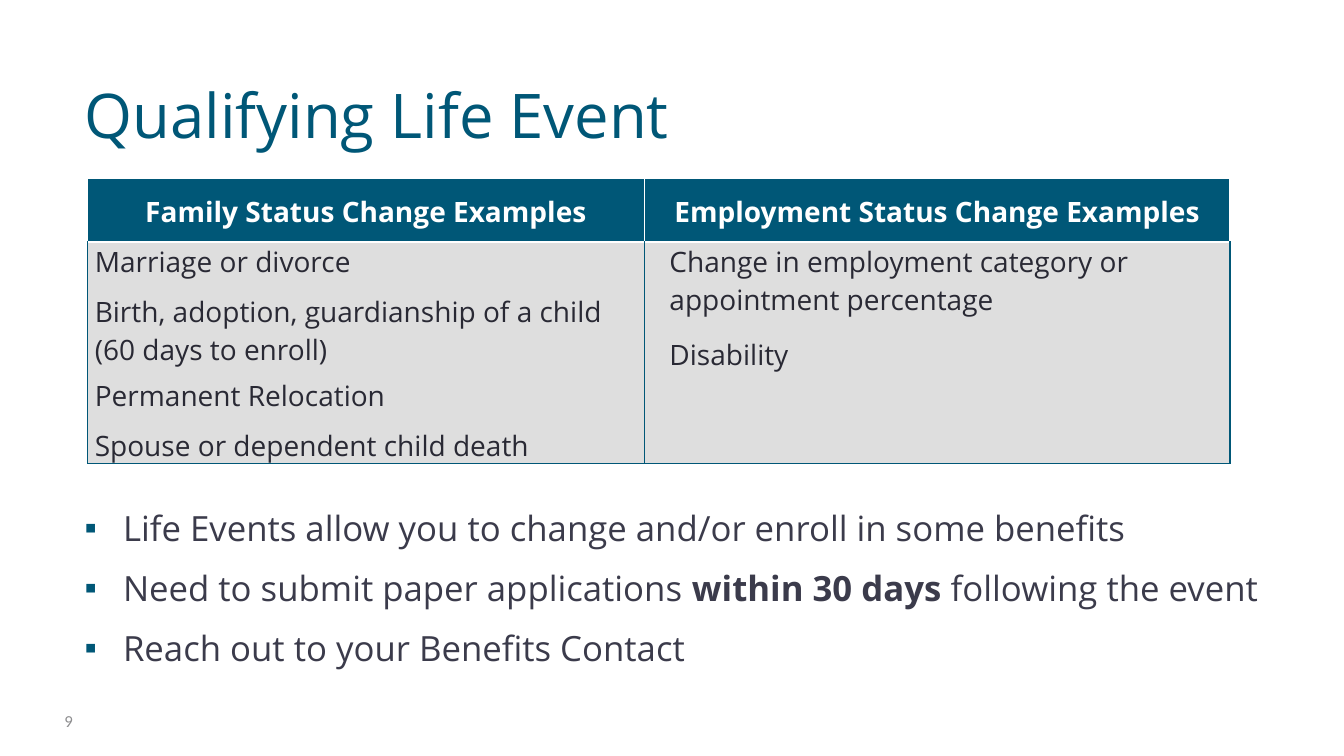
from dataclasses import dataclass

from lxml.etree import SubElement
from pptx import Presentation
from pptx.dml.color import RGBColor as RGB
from pptx.enum.text import MSO_ANCHOR as Anchor, MSO_AUTO_SIZE as AutoSize, PP_ALIGN as Align
from pptx.oxml.ns import qn
from pptx.util import Inches, Pt


@dataclass(frozen=True)
class Theme:
    font: str = "Open Sans"
    number_font: str = "Calibri"
    teal: str = "005777"
    white: str = "FFFFFF"
    cell: str = "DEDEDE"
    cell_text: str = "292934"
    body_text: str = "3B3B4B"
    number_text: str = "8E8E90"
    title_size: float = 44
    body_size: float = 24.8
    table_size: float = 20
    number_size: float = 12


@dataclass(frozen=True)
class Column:
    header: str
    width: float
    events: tuple[str, ...]
    after: tuple[float, ...]
    before: float = 0
    indent: float = 0


T = Theme()
COLUMNS = (
    Column(
        "Family Status Change Examples", 5.52,
        ("Marriage or divorce",
         "Birth, adoption, guardianship of a child (60 days to enroll)",
         "Permanent Relocation",
         "Spouse or dependent child death"),
        (8, 6, 8, 8),
    ),
    Column(
        "Employment Status Change Examples", 5.81,
        ("Change in employment category or appointment percentage", "Disability"),
        (6, 6), before=6, indent=0.18,
    ),
)
ROW_HEIGHTS = (0.63, 2.2)
BULLETS = (
    (("Life Events allow you to change and/or enroll in some benefits", False),),
    (("Need to submit paper applications ", False),
     ("within 30 days ", True),
     ("following the event", False)),
    (("Reach out to your Benefits Contact", False),),
)


def apply(target, **values) -> None:
    for name, value in values.items():
        setattr(target, name, value)


def place(sp, left: float, top: float, width: float, height: float) -> None:
    apply(sp, left=Inches(left), top=Inches(top), width=Inches(width), height=Inches(height))


def add_run(p, text: str, size: float, color: str, bold: bool = False, name: str = T.font) -> None:
    r = p.add_run()
    r.text = text
    apply(r.font, size=Pt(size), bold=bold, name=name)
    r.font.color.rgb = RGB.from_string(color)


def paragraph(tf, index: int):
    return tf.add_paragraph() if index else tf.paragraphs[0]


def set_indent(p, left: float, first: float = 0):
    pPr = p._p.get_or_add_pPr()
    pPr.set("marL", str(Inches(left)))
    pPr.set("indent", str(Inches(first)))
    return pPr


def add_bullet(p) -> None:
    pPr = set_indent(p, 0.38, -0.38)
    color = SubElement(pPr, qn("a:buClr"))
    SubElement(color, qn("a:srgbClr"), val=T.teal)
    SubElement(pPr, qn("a:buFont"), typeface="Arial")
    SubElement(pPr, qn("a:buChar"), char="▪")


def style_cell(cell, fill: str, side: str, anchor: Anchor) -> None:
    apply(cell, margin_left=Inches(0.07), margin_right=Inches(0.07),
          margin_top=Inches(0.01), margin_bottom=0, vertical_anchor=anchor)
    tcPr = cell._tc.get_or_add_tcPr()
    for edge, color in {"L": side, "R": side, "T": T.white, "B": side}.items():
        ln = SubElement(tcPr, qn(f"a:ln{edge}"), w=str(Pt(1)))
        SubElement(SubElement(ln, qn("a:solidFill")), qn("a:srgbClr"), val=color)
    cell.fill.solid()
    cell.fill.fore_color.rgb = RGB.from_string(fill)


def add_events_table(s) -> None:
    width = sum(column.width for column in COLUMNS)
    table = s.shapes.add_table(
        len(ROW_HEIGHTS), len(COLUMNS), Inches(0.87), Inches(1.77),
        Inches(width), Inches(sum(ROW_HEIGHTS))).table
    for row, height in zip(table.rows, ROW_HEIGHTS):
        row.height = Inches(height)
    for c, column in enumerate(COLUMNS):
        table.columns[c].width = Inches(column.width)
        head, body = table.cell(0, c), table.cell(1, c)
        style_cell(head, T.teal, T.white, Anchor.MIDDLE)
        p = head.text_frame.paragraphs[0]
        apply(p, alignment=Align.CENTER, line_spacing=1.07, space_after=Pt(8))
        add_run(p, column.header, T.table_size, T.white, True)
        style_cell(body, T.cell, T.teal, Anchor.TOP)
        for i, (event, after) in enumerate(zip(column.events, column.after)):
            p = paragraph(body.text_frame, i)
            set_indent(p, column.indent)
            apply(p, space_before=Pt(column.before if i else 0), space_after=Pt(after))
            add_run(p, event, T.table_size, T.cell_text)


def add_title(s) -> None:
    sp = s.shapes.title
    place(sp, 0.74, 0.3, 11.94, 1.25)
    tf = sp.text_frame
    apply(tf, vertical_anchor=Anchor.BOTTOM, word_wrap=True, auto_size=AutoSize.NONE)
    p = tf.paragraphs[0]
    p.alignment = Align.LEFT
    add_run(p, "Qualifying Life Event", T.title_size, T.teal)


def add_bullets(s) -> None:
    sp = s.placeholders[1]
    place(sp, 0.74, 4.98, 11.94, 2.04)
    tf = sp.text_frame
    apply(tf, word_wrap=True, auto_size=AutoSize.NONE)
    for i, runs in enumerate(BULLETS):
        p = paragraph(tf, i)
        add_bullet(p)
        apply(p, space_before=Pt(1 if i else 0), space_after=Pt(12))
        for text, bold in runs:
            add_run(p, text, T.body_size, T.body_text, bold)


def add_page_number(s) -> None:
    sp = s.shapes.add_textbox(Inches(0.54), Inches(6.95), Inches(0.56), Inches(0.4))
    tf = sp.text_frame
    apply(tf, vertical_anchor=Anchor.MIDDLE, word_wrap=True)
    add_run(tf.paragraphs[0], "9", T.number_size, T.number_text, name=T.number_font)


def main() -> None:
    prs = Presentation()
    apply(prs, slide_width=Inches(13.33), slide_height=Inches(7.5))
    s = prs.slides.add_slide(prs.slide_layouts[1])
    add_title(s)
    add_bullets(s)
    add_page_number(s)
    add_events_table(s)
    prs.save("out.pptx")


if __name__ == "__main__":
    main()
